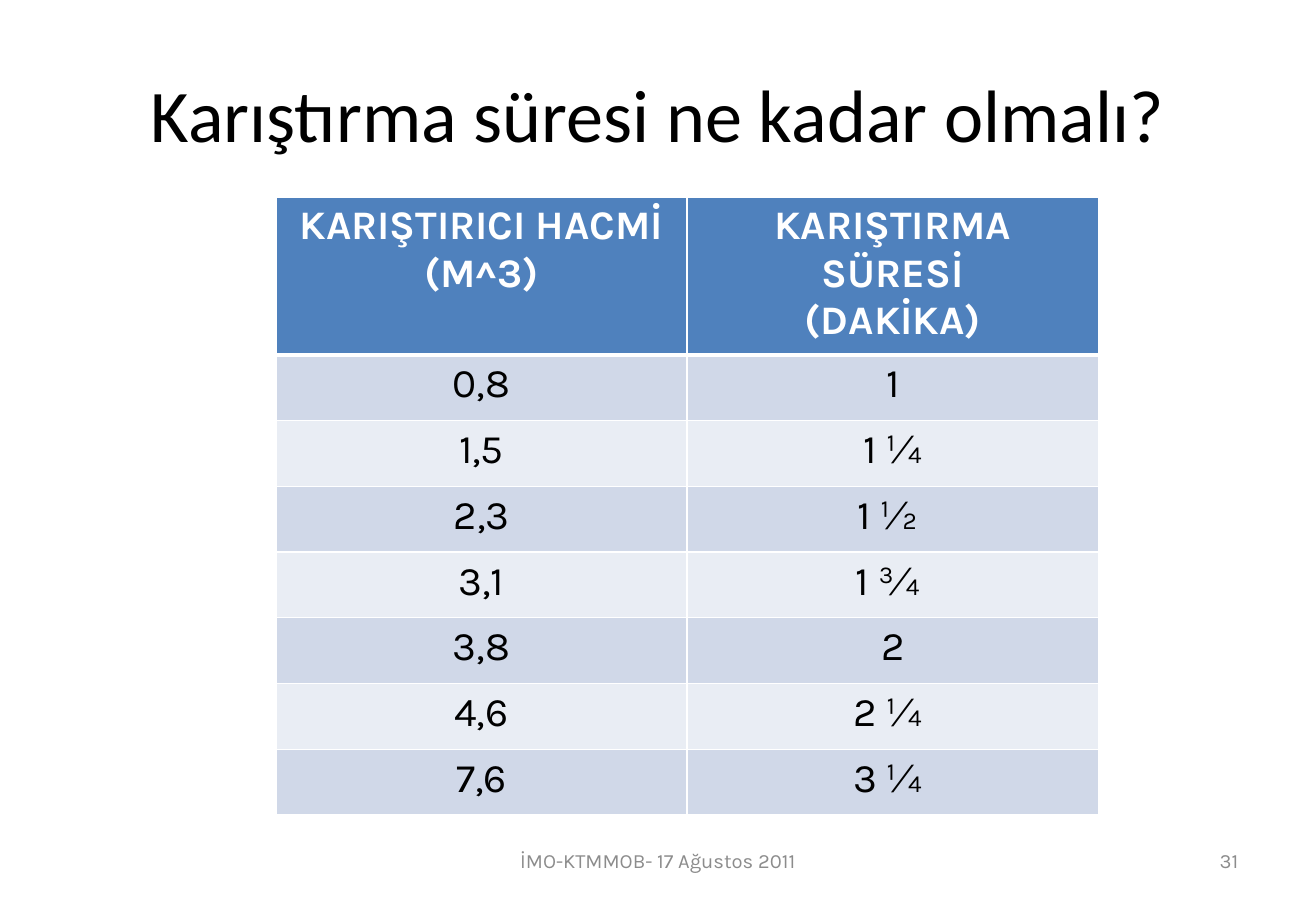
from lxml import etree
from pptx import Presentation
from pptx.dml.color import RGBColor
from pptx.enum.text import MSO_ANCHOR, PP_ALIGN
from pptx.oxml.ns import qn
from pptx.util import Inches, Pt

CENTER, RIGHT = PP_ALIGN.CENTER, PP_ALIGN.RIGHT
MIDDLE = MSO_ANCHOR.MIDDLE
WHITE, BLACK, GREY = "FFFFFF", "000000", "8C8C8C"
HEADER_FILL, BAND_FILLS = "4F81BD", ("D0D8E8", "E9EDF4")
HEADERS = ("KARIŞTIRICI HACMİ\n(M^3)", "KARIŞTIRMA SÜRESİ\n(DAKİKA)")
MIXING_TIMES = (
    ("0,8", "1"),
    ("1,5", "1 ¼"),
    ("2,3", "1 ½ "),
    ("3,1", "1 ¾ "),
    ("3,8", "2"),
    ("4,6", "2 ¼ "),
    ("7,6", "3 ¼ "),
)


def color(value):
    """Turn a hex string into a colour."""
    return RGBColor.from_string(value)


def write(frame, text, size, font, ink, align=CENTER, bold=False):
    """Set the text of a frame and format its runs."""
    frame.text = text
    for para in frame.paragraphs:
        para.alignment = align
        for span in para.runs:
            span.font.size = Pt(size)
            span.font.name = font
            span.font.bold = bold
            span.font.color.rgb = color(ink)


def add_title(page, box, text):
    """Place and fill the title placeholder."""
    title = page.shapes.title
    title.left, title.top, title.width, title.height = map(Inches, box)
    title.text_frame.vertical_anchor = MIDDLE
    write(title.text_frame, text, 44, "Calibri", BLACK)


def add_footer(page, box, text, align):
    """Add a small grey footer text in the given box."""
    footer = page.shapes.add_textbox(*map(Inches, box)).text_frame
    footer.word_wrap = True
    footer.vertical_anchor = MIDDLE
    write(footer, text, 12, "Karla", GREY, align)


def set_borders(cell, bottom):
    """Draw white cell borders with the given bottom width in points."""
    properties = cell._tc.get_or_add_tcPr()
    for side, width in (("L", 1), ("R", 1), ("T", 1), ("B", bottom)):
        line = etree.SubElement(properties, qn(f"a:ln{side}"), w=str(Pt(width)))
        fill = etree.SubElement(line, qn("a:solidFill"))
        etree.SubElement(fill, qn("a:srgbClr"), val=WHITE)


def add_mixing_table(page, box, header_height):
    """Add the table of mixer volumes and mixing times."""
    rows = (HEADERS,) + MIXING_TIMES
    table = page.shapes.add_table(len(rows), len(HEADERS), *map(Inches, box)).table
    row_height = (box[3] - header_height) / len(MIXING_TIMES)
    for index, values in enumerate(rows):
        is_header = index == 0
        table.rows[index].height = Inches(header_height if is_header else row_height)
        for column, text in enumerate(values):
            cell = table.cell(index, column)
            write(cell.text_frame, text, 24, "Karla",
                  WHITE if is_header else BLACK, bold=is_header)
            set_borders(cell, 3 if is_header else 1)
            cell.fill.solid()
            cell.fill.fore_color.rgb = color(
                HEADER_FILL if is_header else BAND_FILLS[(index - 1) % 2])
    for row in range(1, 2):
        for column in range(len(HEADERS)):
            top = table.cell(row, column)._tc.tcPr.find(qn("a:lnT"))
            top.set("w", str(Pt(3)))


def main():
    """Build the slide and save the deck."""
    deck = Presentation()
    deck.slide_width, deck.slide_height = Inches(10.83), Inches(7.5)
    page = deck.slides.add_slide(deck.slide_layouts[5])
    add_title(page, (0.54, 0.3, 9.75, 1.25), "Karıştırma süresi ne kadar olmalı?")
    add_footer(page, (3.7, 6.83, 3.43, 0.5), "İMO-KTMMOB- 17 Ağustos 2011", CENTER)
    add_mixing_table(page, (2.27, 1.62, 6.77, 4.72), 0.93)
    add_footer(page, (7.76, 6.83, 2.53, 0.5), "31", RIGHT)
    deck.save("out.pptx")


if __name__ == "__main__":
    main()
